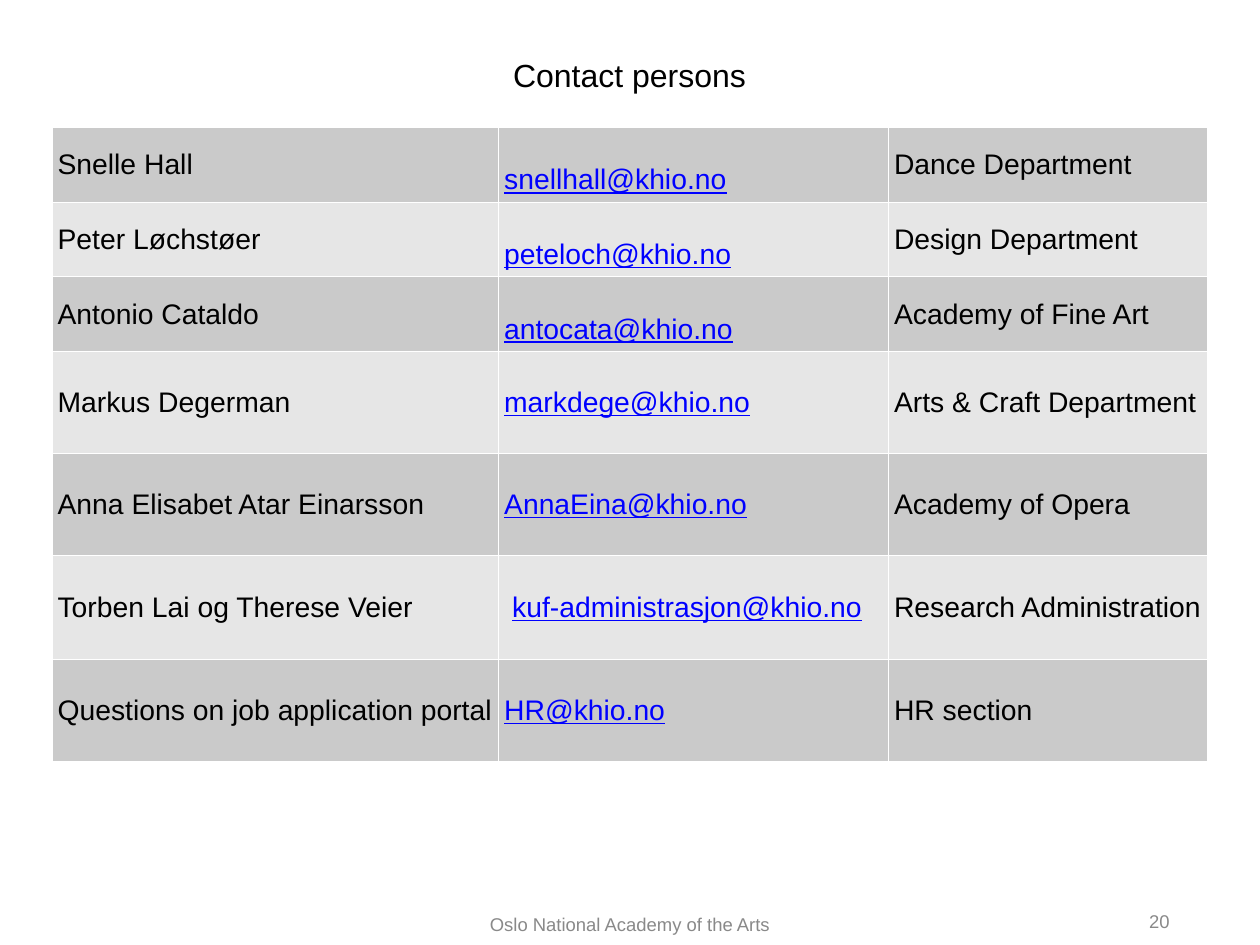
from pptx import Presentation
from pptx.dml.color import RGBColor
from pptx.enum.text import MSO_ANCHOR, PP_ALIGN
from pptx.oxml import parse_xml
from pptx.oxml.ns import nsdecls
from pptx.util import Inches, Pt

BLACK, GREY, BLUE, WHITE = "000000", "898989", "0000FF", "FFFFFF"
BANDS = ("CACACA", "E6E6E6")
COLUMN_WIDTHS = (5.04, 4.4, 3.6)
MARGIN = 0.06
LOW, INDENTED = {"margin_top": 0.4}, {"margin_left": 0.15}
CONTACTS = (
    ("Snelle Hall", "snellhall@khio.no", "Dance Department", 0.83, LOW),
    ("Peter Løchstøer", "peteloch@khio.no", "Design Department", 0.83, LOW),
    ("Antonio Cataldo", "antocata@khio.no", "Academy of Fine Art", 0.83, LOW),
    ("Markus Degerman", "markdege@khio.no", "Arts & Craft Department", 1.15, {}),
    ("Anna Elisabet Atar Einarsson", "AnnaEina@khio.no", "Academy of Opera", 1.15, {}),
    ("Torben Lai og Therese Veier", "kuf-administrasjon@khio.no",
     "Research Administration", 1.18, INDENTED),
    ("Questions on job application portal", "HR@khio.no", "HR section", 1.15, {}),
)


def color(value):
    return RGBColor.from_string(value)


class SlideBuilder:
    """Draws text boxes and the contact table on one slide in a shared style."""

    def __init__(self, page, font_name="Arial"):
        self.page = page
        self.font_name = font_name

    def add_span(self, frame, text, size, ink=BLACK, align=PP_ALIGN.LEFT, underline=False):
        para = frame.paragraphs[0]
        para.alignment = align
        span = para.add_run()
        span.text = text
        formats = {"name": self.font_name, "size": Pt(size), "bold": False, "underline": underline}
        for name, value in formats.items():
            setattr(span.font, name, value)
        span.font.color.rgb = color(ink)

    def text(self, text, left, top, width, height, size, wrap=False,
             anchor=MSO_ANCHOR.MIDDLE, **style):
        box = self.page.shapes.add_textbox(Inches(left), Inches(top), Inches(width), Inches(height))
        frame = box.text_frame
        formats = {"word_wrap": wrap, "vertical_anchor": anchor}
        for side in ("left", "top", "right", "bottom"):
            formats[f"margin_{side}"] = Inches(0.05)
        for name, value in formats.items():
            setattr(frame, name, value)
        self.add_span(frame, text, size, **style)

    def borders(self, cell):
        properties = cell._tc.get_or_add_tcPr()
        for index, side in enumerate(("lnL", "lnR", "lnT", "lnB")):
            properties.insert(index, parse_xml(
                f'<a:{side} {nsdecls("a")} w="12700"><a:solidFill>'
                f'<a:srgbClr val="{WHITE}"/></a:solidFill></a:{side}>'))

    def cell(self, cell, text, fill, margins, **style):
        formats = {f"margin_{side}": MARGIN for side in ("left", "top", "right", "bottom")}
        formats.update(margins)
        for name, value in formats.items():
            setattr(cell, name, Inches(value))
        cell.vertical_anchor = MSO_ANCHOR.MIDDLE
        cell.fill.solid()
        cell.fill.fore_color.rgb = color(fill)
        self.borders(cell)
        self.add_span(cell.text_frame, text, 23, **style)

    def contact_table(self, left, top):
        height = sum(contact[3] for contact in CONTACTS)
        table = self.page.shapes.add_table(
            len(CONTACTS), len(COLUMN_WIDTHS), Inches(left), Inches(top),
            Inches(sum(COLUMN_WIDTHS)), Inches(height)).table
        table.first_row = table.horz_banding = False
        for column, width in zip(table.columns, COLUMN_WIDTHS):
            column.width = Inches(width)
        for index, (person, email, department, row_height, margins) in enumerate(CONTACTS):
            table.rows[index].height = Inches(row_height)
            fill = BANDS[index % 2]
            self.cell(table.cell(index, 0), person, fill, {})
            self.cell(table.cell(index, 1), email, fill, margins, ink=BLUE, underline=True)
            self.cell(table.cell(index, 2), department, fill, {})


def main():
    deck = Presentation()
    deck.slide_width, deck.slide_height = Inches(14.22), Inches(10.67)
    builder = SlideBuilder(deck.slides.add_slide(deck.slide_layouts[6]))
    builder.text("Oslo National Academy of the Arts", 4.76, 10.16, 4.7, 0.54, 15,
                 wrap=True, ink=GREY, align=PP_ALIGN.CENTER)
    builder.text("20", 12.9, 10.24, 0.35, 0.33, 15, ink=GREY, align=PP_ALIGN.RIGHT)
    builder.contact_table(0.59, 1.44)
    builder.text("Contact persons", 5.74, 0.58, 2.74, 0.52, 26, anchor=MSO_ANCHOR.TOP)
    deck.save("out.pptx")


if __name__ == "__main__":
    main()
